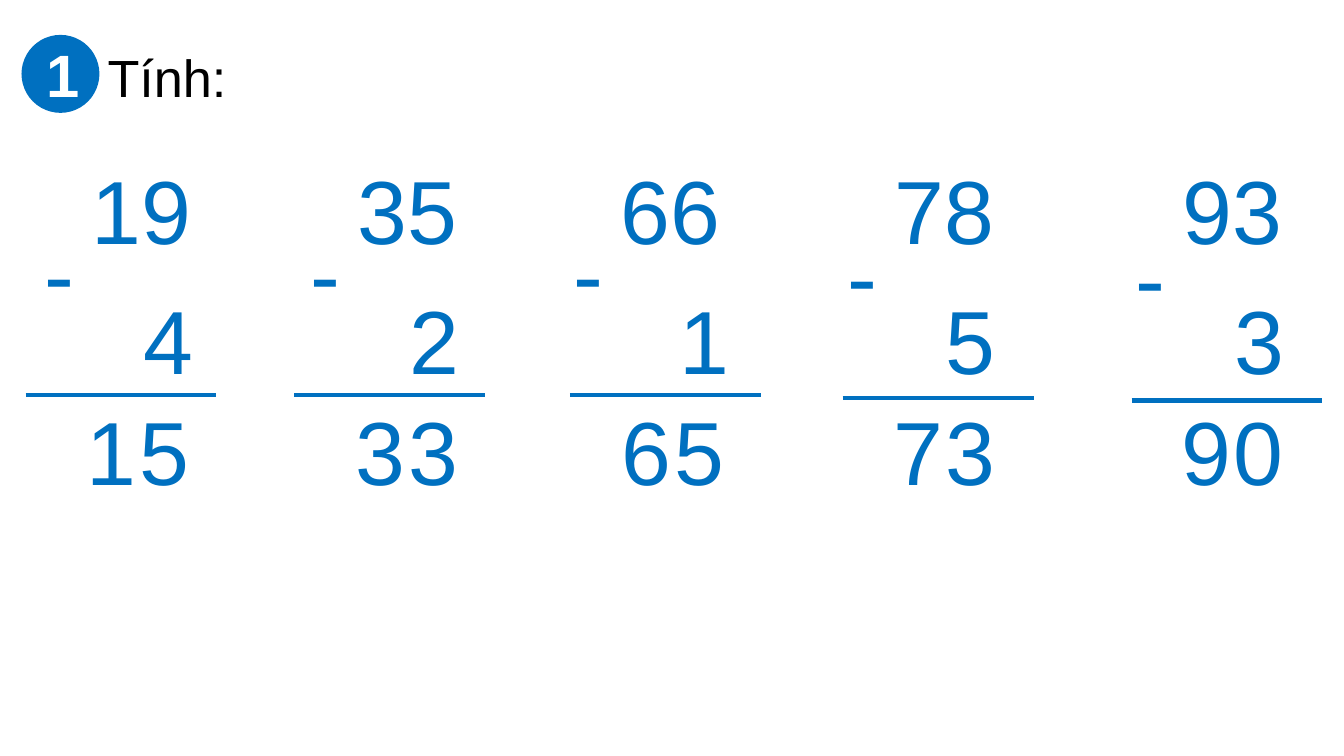
"""Build a slide of five column subtractions with their answers."""
from lxml import etree
from pptx import Presentation
from pptx.dml.color import RGBColor
from pptx.enum import shapes, text
from pptx.oxml.ns import qn
from pptx.util import Inches, Pt

BLUE = RGBColor(0x00, 0x70, 0xC0)
WHITE = RGBColor(0xFF, 0xFF, 0xFF)
BLACK = RGBColor(0x00, 0x00, 0x00)


def write(frame, words, size, color, align=text.PP_ALIGN.CENTER, bold=False):
    frame.word_wrap = True
    para = frame.paragraphs[0]
    para.alignment = align
    span = para.add_run()
    span.text = words
    span.font.name = "Arial"
    span.font.size = Pt(size)
    span.font.bold = bold
    span.font.color.rgb = color


def add_number(words, center, top, width=1.17):
    box = page.shapes.add_textbox(
        Inches(center - width / 2), Inches(top), Inches(width), Inches(0.91))
    write(box.text_frame, words, 48, BLUE)
    box.text_frame.auto_size = text.MSO_AUTO_SIZE.SHAPE_TO_FIT_TEXT


deck = Presentation()
deck.slide_width = Inches(10)
deck.slide_height = Inches(10) * 9 // 16
page = deck.slides.add_slide(deck.slide_layouts[5])

title = page.shapes.title
title.left, title.top = Inches(0.7), Inches(0.1)
title.width, title.height = Inches(6.88), Inches(0.94)
title.text_frame.auto_size = text.MSO_AUTO_SIZE.NONE
title.text_frame.vertical_anchor = text.MSO_ANCHOR.MIDDLE
write(title.text_frame, "Tính:", 28, BLACK, text.PP_ALIGN.JUSTIFY)

badge = page.shapes.add_shape(
    shapes.MSO_SHAPE.OVAL, Inches(0.16), Inches(0.26), Inches(0.58), Inches(0.58))
badge.shadow.inherit = False
badge.fill.solid()
badge.fill.fore_color.rgb = BLUE
badge.line.fill.background()
badge.text_frame.vertical_anchor = text.MSO_ANCHOR.MIDDLE
write(badge.text_frame, "1", 32, WHITE, bold=True)

problems = [
    (19, 4, 1.05, 1.25, 1.17, 1.22, 0.61, 0.19, 2.94, 1.57),
    (35, 2, 3.03, 3.23, 0.66, 3.21, 0.54, 2.19, 2.94, 1.57),
    (66, 1, 4.99, 5.2, 0.49, 5.19, 0.54, 4.24, 2.94, 1.57),
    (78, 5, 7.03, 7.21, 0.54, 7.21, 0.54, 6.27, 2.96, 1.59),
    (93, 3, 9.17, 9.37, 1.17, 9.35, 0.54, 8.42, 2.98, 1.6),
]
for (minuend, subtrahend, center, lower_center, lower_width,
     units_center, digit_width, rule_left, rule_top, minus_top) in problems:
    add_number(str(minuend), center, 1.1)
    add_number("-", center - 0.61, minus_top)
    add_number(str(subtrahend), lower_center, 2.07, lower_width)

    rule = page.shapes.add_connector(
        shapes.MSO_CONNECTOR.STRAIGHT, Inches(rule_left), Inches(rule_top),
        Inches(rule_left + 1.42), Inches(rule_top))
    rule.line.color.rgb = BLUE
    rule.line.width = Pt(2.25)
    etree.SubElement(rule._element.spPr, qn("a:effectLst"))

    tens, units = str(minuend - subtrahend)
    add_number(units, units_center, 2.9, digit_width)
    add_number(tens, units_center - 0.39, 2.9, digit_width)

deck.save("out.pptx")
